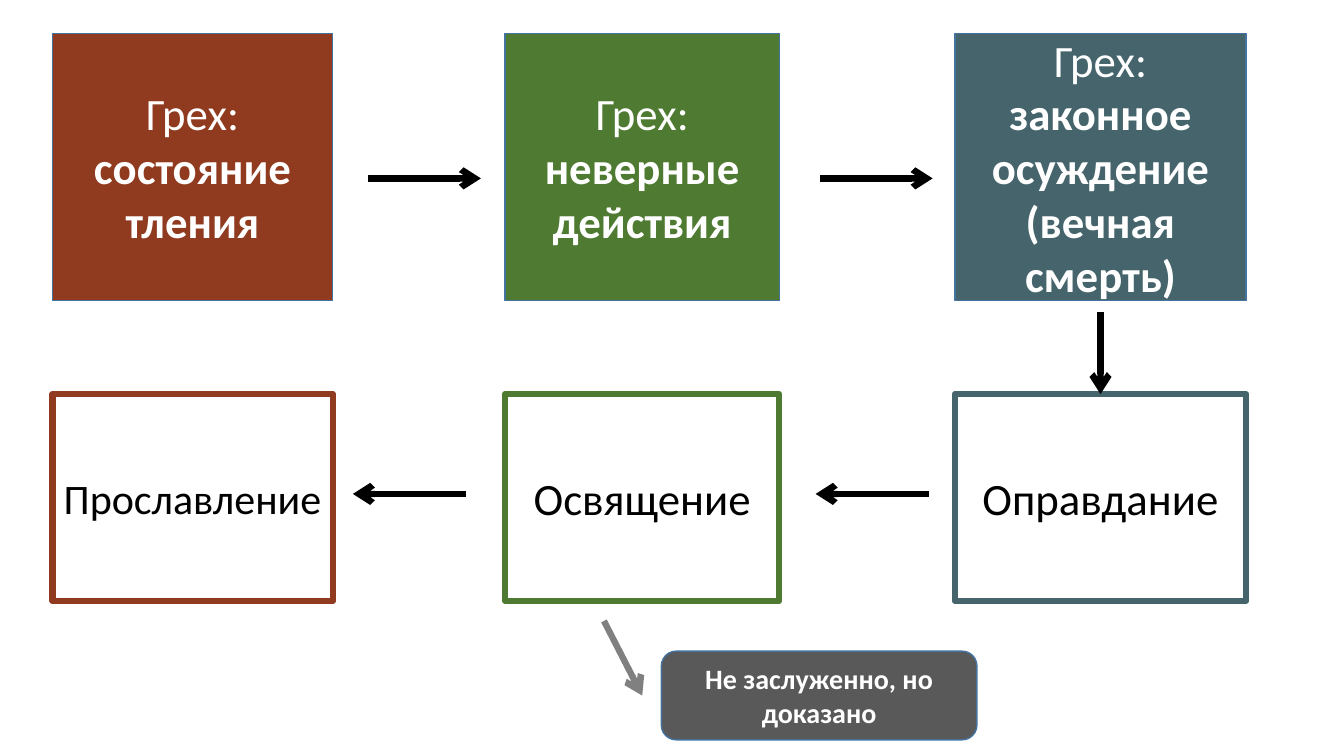
import pptx
import pptx.util
import pptx.dml.color
import pptx.enum.shapes
import pptx.enum.text
import pptx.oxml
import pptx.oxml.ns
from dataclasses import dataclass

# Content: one entry per column: left, width, colour, sin, remedy, remedy size
COLS = [
    (0.52, 2.78, "903B20", "состояние тления", "Прославление", 30),
    (5.01, 2.72, "4F7A32", "неверные действия", "Освящение", 32),
    (9.47, 2.89, "45646B", "законное осуждение (вечная смерть)", "Оправдание", 32),
]
LEAD = "Грех: "
NOTE = "Не заслуженно, но доказано"

# Grid: rows as top and height, arrows as start points in the gaps
SIN_ROW = (0.33, 2.65)
FIX_ROW = (3.91, 2.05)
NOTE_BOX = (6.56, 6.46, 3.13, 0.88)
REACH = 1.12
FLOWS = [(1.77, REACH, (3.65, 8.13)), (4.9, -REACH, (4.62, 9.21))]
NOTE_ARROW = (5.99, 6.16, 6.37, 6.9)
DROP_GAP = 0.12


@dataclass(frozen=True)
class Theme:
    font: str = "Calibri"
    white: str = "FFFFFF"
    black: str = "000000"
    gray: str = "808080"
    dark: str = "595959"
    edge: str = "43739E"
    big: int = 32
    small: int = 20
    thin: float = 1
    thick: float = 4.5


T = Theme()
KIND = pptx.enum.shapes.MSO_SHAPE
inch = pptx.util.Inches

deck = pptx.Presentation()
deck.slide_width, deck.slide_height = inch(13.33), inch(7.5)
slide = deck.slides.add_slide(deck.slide_layouts[6])


def rgb(code):
    return pptx.dml.color.RGBColor.from_string(code)


def write(par, text, size=T.big, color=T.white, bold=False):
    run = par.add_run()
    run.text = text
    font = run.font
    font.name, font.size, font.bold = T.font, pptx.util.Pt(size), bold
    font.color.rgb = rgb(color)


def box(at, fill, edge=T.edge, width=T.thin, kind=KIND.RECTANGLE):
    """Draw a box; return it with its centred paragraph."""
    shape = slide.shapes.add_shape(kind, *map(inch, at))
    shape.shadow.inherit = False
    shape.fill.solid()
    shape.fill.fore_color.rgb = rgb(fill)
    shape.line.color.rgb = rgb(edge)
    shape.line.width = pptx.util.Pt(width)
    frame = shape.text_frame
    frame.word_wrap = True
    frame.vertical_anchor = pptx.enum.text.MSO_ANCHOR.MIDDLE
    par = frame.paragraphs[0]
    par.alignment = pptx.enum.text.PP_ALIGN.CENTER
    return shape, par


def arrow(x1, y1, x2, y2, color=T.black):
    link = slide.shapes.add_connector(
        pptx.enum.shapes.MSO_CONNECTOR.STRAIGHT, *map(inch, (x1, y1, x2, y2)))
    link.line.color.rgb = rgb(color)
    link.line.width = pptx.util.Pt(T.thick)
    head = pptx.oxml.parse_xml(
        '<a:tailEnd %s type="arrow"/>' % pptx.oxml.ns.nsdecls("a"))
    link.line._get_or_add_ln().append(head)
    link._element.spPr.append(pptx.oxml.parse_xml(
        "<a:effectLst %s/>" % pptx.oxml.ns.nsdecls("a")))
    return link


# Sins above, remedies below
for left, wide, hue, sin, fix, size in COLS:
    top, high = SIN_ROW
    _, par = box((left, top, wide, high), hue)
    write(par, LEAD)
    write(par, sin, bold=True)
    top, high = FIX_ROW
    last, par = box((left, top, wide, high), T.white, edge=hue, width=T.thick)
    write(par, fix, size=size, color=T.black)

# Arrows along both rows
for y, reach, starts in FLOWS:
    for x in starts:
        arrow(x, y, x + reach, y)

# Arrow down the last column
left, wide = COLS[-1][:2]
mid = left + wide / 2
drop = arrow(mid, sum(SIN_ROW) + DROP_GAP, mid, FIX_ROW[0])
drop.end_connect(last, 0)

# Note under the middle column
arrow(*NOTE_ARROW, color=T.gray)
_, par = box(NOTE_BOX, T.dark, kind=KIND.ROUNDED_RECTANGLE)
write(par, NOTE, size=T.small, bold=True)

deck.save("out.pptx")
